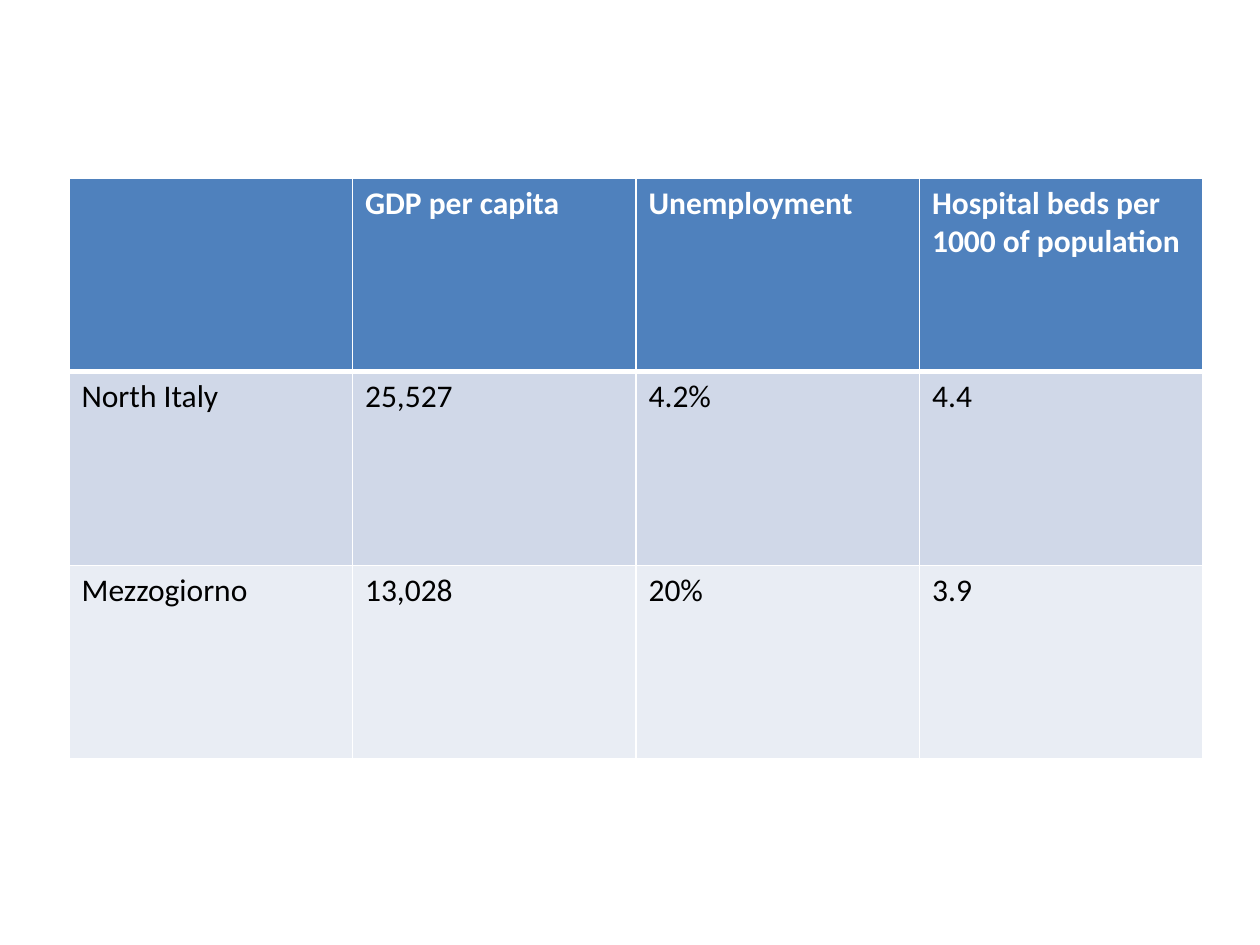
import lxml.etree
import pptx
import pptx.dml.color
import pptx.oxml.ns
import pptx.util

WHITE = pptx.dml.color.RGBColor(0xFF, 0xFF, 0xFF)
BLACK = pptx.dml.color.RGBColor(0x00, 0x00, 0x00)
HEADER_BLUE = pptx.dml.color.RGBColor(0x4F, 0x81, 0xBD)
BAND_DARK = pptx.dml.color.RGBColor(0xD0, 0xD8, 0xE8)
BAND_LIGHT = pptx.dml.color.RGBColor(0xE9, 0xED, 0xF4)

REGION_ROWS = [
    ["", "GDP per capita", "Unemployment", "Hospital beds per 1000 of population"],
    ["North Italy", "25,527", "4.2%", "4.4"],
    ["Mezzogiorno", "13,028", "20%", "3.9"],
]


def px(length):
    return pptx.util.Emu(round(length * 914400 / 126))


class SlideBuilder:
    font_name = "Calibri"
    font_size = pptx.util.Pt(18)
    thin = pptx.util.Pt(1)
    thick = pptx.util.Pt(3)

    def __init__(self, slide):
        self.slide = slide

    def table(self, rows, left, top, width, height):
        frame = self.slide.shapes.add_table(
            len(rows), len(rows[0]), px(left), px(top), px(width), px(height)
        )
        table = frame.table
        for row in table.rows:
            row.height = px(height / len(rows))
        for column in table.columns:
            column.width = px(width / len(rows[0]))
        for row_index, texts in enumerate(rows):
            for column_index, text in enumerate(texts):
                self.cell(table.cell(row_index, column_index), row_index, text)

    def cell(self, cell, row_index, text):
        is_header = row_index == 0
        self.borders(
            cell,
            top=self.thick if row_index == 1 else self.thin,
            bottom=self.thick if is_header else self.thin,
        )
        cell.fill.solid()
        cell.fill.fore_color.rgb = (HEADER_BLUE, BAND_DARK, BAND_LIGHT)[row_index]
        paragraph = cell.text_frame.paragraphs[0]
        paragraph.font.size = self.font_size
        if text:
            run = paragraph.add_run()
            run.text = text
            run.font.name = self.font_name
            run.font.size = self.font_size
            run.font.bold = is_header
            run.font.color.rgb = WHITE if is_header else BLACK

    def borders(self, cell, top, bottom):
        qn = pptx.oxml.ns.qn
        properties = cell._tc.get_or_add_tcPr()
        widths = {"a:lnL": self.thin, "a:lnR": self.thin, "a:lnT": top, "a:lnB": bottom}
        for tag, width in widths.items():
            line = lxml.etree.SubElement(properties, qn(tag), w=str(int(width)))
            fill = lxml.etree.SubElement(line, qn("a:solidFill"))
            lxml.etree.SubElement(fill, qn("a:srgbClr"), val=str(WHITE))


def main():
    presentation = pptx.Presentation()
    presentation.slide_width = px(1260)
    presentation.slide_height = px(945)
    slide = presentation.slides.add_slide(presentation.slide_layouts[6])
    builder = SlideBuilder(slide)
    builder.table(REGION_ROWS, left=69, top=178, width=1134, height=581)
    presentation.save("out.pptx")


if __name__ == "__main__":
    main()
